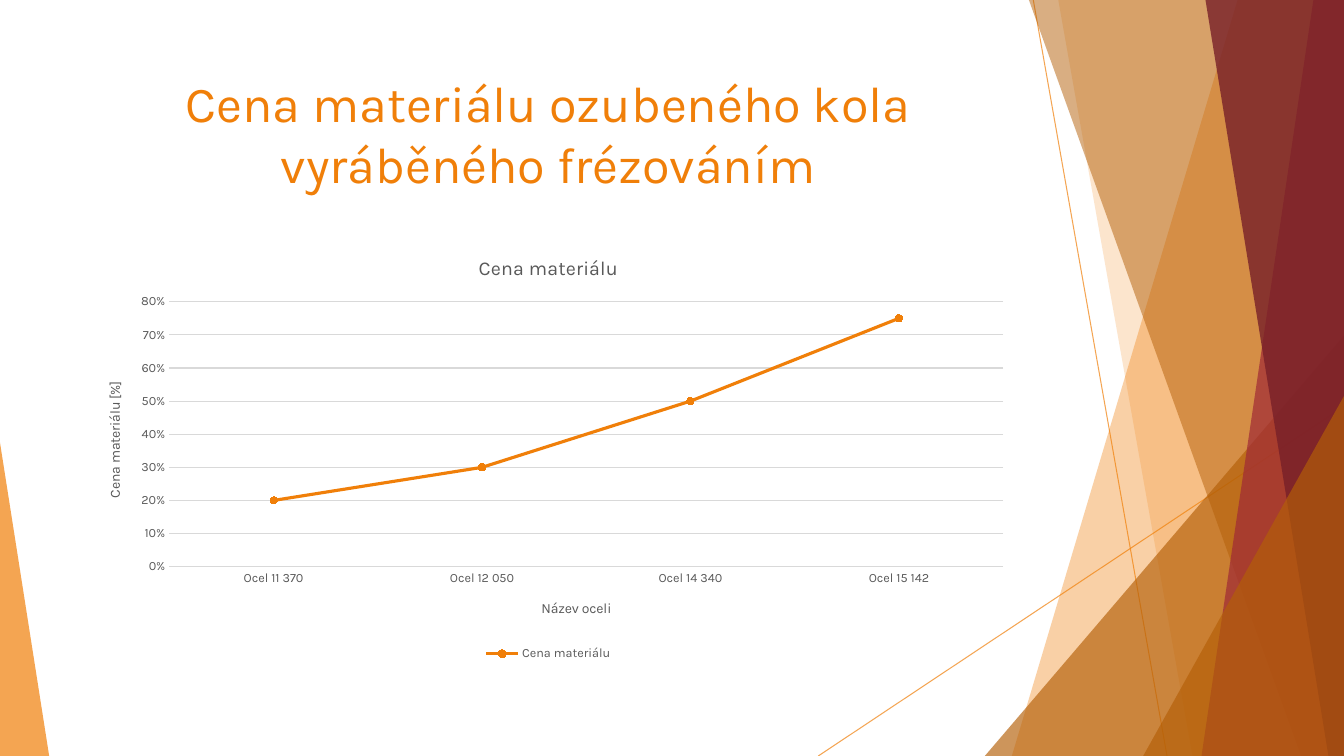
"""Build a slide with a line chart of steel prices beside a faceted border."""
from dataclasses import dataclass

from lxml.etree import SubElement
from pptx import Presentation
from pptx.chart.data import CategoryChartData
from pptx.dml.color import RGBColor
from pptx.enum.chart import XL_CHART_TYPE, XL_LEGEND_POSITION, XL_MARKER_STYLE, XL_TICK_MARK
from pptx.enum.shapes import MSO_CONNECTOR, MSO_SHAPE
from pptx.enum.text import MSO_ANCHOR, PP_ALIGN
from pptx.oxml import parse_xml
from pptx.oxml.ns import nsdecls, qn
from pptx.util import Cm, Pt

FONT = "Karla"
ORANGE, BROWN, RED, WINE = "F07F09", "B45F07", "9F2936", "771F28"
GREY, PALE = "595959", "D9D9D9"
WIDTH, HEIGHT = 33.87, 19.05


@dataclass(frozen=True)
class Ray:
    """A thin line between two points."""
    start: tuple[float, float]
    end: tuple[float, float]


@dataclass(frozen=True)
class Facet:
    """A panel from a slanted left side to the right edge of the slide."""
    top_left: float
    bottom_left: float
    color: str
    opacity: int


@dataclass(frozen=True)
class Corner:
    """A right triangle standing on the bottom edge of the slide."""
    left: float
    top: float
    width: float
    apex: float
    color: str
    opacity: int


RAYS = [Ray((26.04, 0), (29.41, HEIGHT)), Ray((WIDTH, 10.24), (20.62, HEIGHT))]
BORDER = [
    Facet(31.19, 25.5, ORANGE, 36),
    Facet(26.67, 30.05, ORANGE, 20),
    Corner(24.82, 8.46, 9.05, 1, BROWN, 66),
    Facet(25.93, 32.79, BROWN, 50),
    Facet(33.1, 30.28, RED, 70),
    Facet(30.38, 33.48, WINE, 80),
    Corner(28.81, 9.98, 5.06, 1, BROWN, 66),
    Corner(0, 11.15, 1.24, 0, ORANGE, 70),
]
PRICES = {"Ocel 11 370": 0.2, "Ocel 12 050": 0.3, "Ocel 14 340": 0.5, "Ocel 15 142": 0.75}


def paint(color_format, color: str) -> None:
    """Set a colour from a hex string."""
    color_format.rgb = RGBColor.from_string(color)


def set_font(font, size: float, color: str) -> None:
    """Set typeface, size and colour of a font."""
    font.name, font.size, font.bold = FONT, Pt(size), False
    paint(font.color, color)


def set_line(line, color: str, width: float) -> None:
    """Give a line a solid colour and a width in points."""
    line.fill.solid()
    paint(line.fill.fore_color, color)
    line.width = Pt(width)


def set_opacity(shape, opacity: int) -> None:
    """Make the first colour of a shape partly transparent."""
    color = next(shape._element.spPr.iter(qn("a:srgbClr")))
    SubElement(color, qn("a:alpha")).set("val", str(opacity * 1000))


def draw_ray(page, ray: Ray) -> None:
    """Draw a thin translucent line."""
    line = page.shapes.add_connector(MSO_CONNECTOR.STRAIGHT, *map(Cm, ray.start + ray.end))
    set_line(line.line, ORANGE, 0.75)
    set_opacity(line, 70)
    SubElement(line._element.spPr, qn("a:effectLst"))


def draw_panel(page, panel: Facet | Corner) -> None:
    """Draw one translucent panel of the border."""
    if isinstance(panel, Facet):
        builder = page.shapes.build_freeform(Cm(panel.top_left), 0)
        corners = [(WIDTH, 0), (WIDTH, HEIGHT), (panel.bottom_left, HEIGHT)]
        builder.add_line_segments([(Cm(x), Cm(y)) for x, y in corners], close=True)
        shape = builder.convert_to_shape()
    else:
        shape = page.shapes.add_shape(
            MSO_SHAPE.ISOSCELES_TRIANGLE, Cm(panel.left), Cm(panel.top),
            Cm(panel.width), Cm(HEIGHT - panel.top))
        shape.adjustments[0] = panel.apex
    shape.shadow.inherit = False
    shape.fill.solid()
    paint(shape.fill.fore_color, panel.color)
    shape.line.fill.background()
    set_opacity(shape, panel.opacity)


def write(frame, text: str, size: float, color: str) -> None:
    """Write one centred run into a text frame."""
    para = frame.paragraphs[0]
    para.alignment = PP_ALIGN.CENTER
    span = para.add_run()
    span.text = text
    set_font(span.font, size, color)


def place(element, inner: bool = False, **fractions: float) -> None:
    """Fix the position of a chart part as fractions of the chart."""
    for old in element.findall(qn("c:layout")):
        element.remove(old)
    parts = ['<c:layoutTarget val="inner"/>'] if inner else []
    parts += [f'<c:{key}Mode val="edge"/>' for key in ("x", "y")]
    parts += [f'<c:{key} val="{value}"/>' for key, value in fractions.items()]
    layout = parse_xml(f'<c:layout {nsdecls("c")}><c:manualLayout>{"".join(parts)}'
                       "</c:manualLayout></c:layout>")
    text = element.find(qn("c:tx"))
    if text is None:
        element.insert(0, layout)
    else:
        text.addnext(layout)


def style_axis(axis, title: str, x: float, y: float) -> None:
    """Set the title, labels and ticks of an axis."""
    write(axis.axis_title.text_frame, title, 10, GREY)
    place(axis.axis_title._element, x=x, y=y)
    axis.major_tick_mark = axis.minor_tick_mark = XL_TICK_MARK.NONE
    set_font(axis.tick_labels.font, 9, GREY)


def draw_chart(page) -> None:
    """Draw the line chart of material prices."""
    data = CategoryChartData(number_format="0%")
    data.categories = PRICES.keys()
    data.add_series("Cena materiálu", PRICES.values())
    chart = page.shapes.add_chart(XL_CHART_TYPE.LINE_MARKERS, Cm(1.88), Cm(5.99),
                                  Cm(23.88), Cm(10.77), data).chart
    set_font(chart.font, 10, "000000")
    write(chart.chart_title.text_frame, "Cena materiálu", 14, GREY)
    chart.chart_title.include_in_layout = False
    chart.has_legend = True
    chart.legend.position = XL_LEGEND_POSITION.BOTTOM
    chart.legend.include_in_layout = False
    set_font(chart.legend.font, 9, GREY)

    style_axis(chart.category_axis, "Název oceli", 0.49, 0.84)
    set_line(chart.category_axis.format.line, PALE, 0.75)
    prices = chart.value_axis
    style_axis(prices, "Cena materiálu [%]", 0.03, 0.33)
    prices.minimum_scale, prices.maximum_scale, prices.major_unit = 0, 0.8, 0.1
    prices.tick_labels.number_format = "0%"
    prices.tick_labels.number_format_is_linked = False
    prices.format.line.fill.background()
    set_line(prices.major_gridlines.format.line, PALE, 0.75)

    plot = chart.plots[0]
    plot.vary_by_categories = False
    place(plot._element.getparent(), inner=True, x=0.1, y=0.15, w=0.88, h=0.62)
    series = plot.series[0]
    series.smooth = False
    set_line(series.format.line, ORANGE, 2.25)
    series.marker.style, series.marker.size = XL_MARKER_STYLE.CIRCLE, 5
    series.marker.format.fill.solid()
    paint(series.marker.format.fill.fore_color, ORANGE)
    set_line(series.marker.format.line, ORANGE, 0.75)


def main() -> None:
    """Build and save the deck."""
    deck = Presentation()
    deck.slide_width, deck.slide_height = Cm(WIDTH), Cm(HEIGHT)
    page = deck.slides.add_slide(deck.slide_layouts[6])
    for ray in RAYS:
        draw_ray(page, ray)
    for panel in BORDER:
        draw_panel(page, panel)
    box = page.shapes.add_textbox(Cm(1.88), Cm(1.7), Cm(23.88), Cm(3.66))
    box.text_frame.word_wrap = True
    box.text_frame.vertical_anchor = MSO_ANCHOR.TOP
    write(box.text_frame, "Cena materiálu ozubeného kola vyráběného frézováním", 36, ORANGE)
    draw_chart(page)
    deck.save("out.pptx")


if __name__ == "__main__":
    main()
